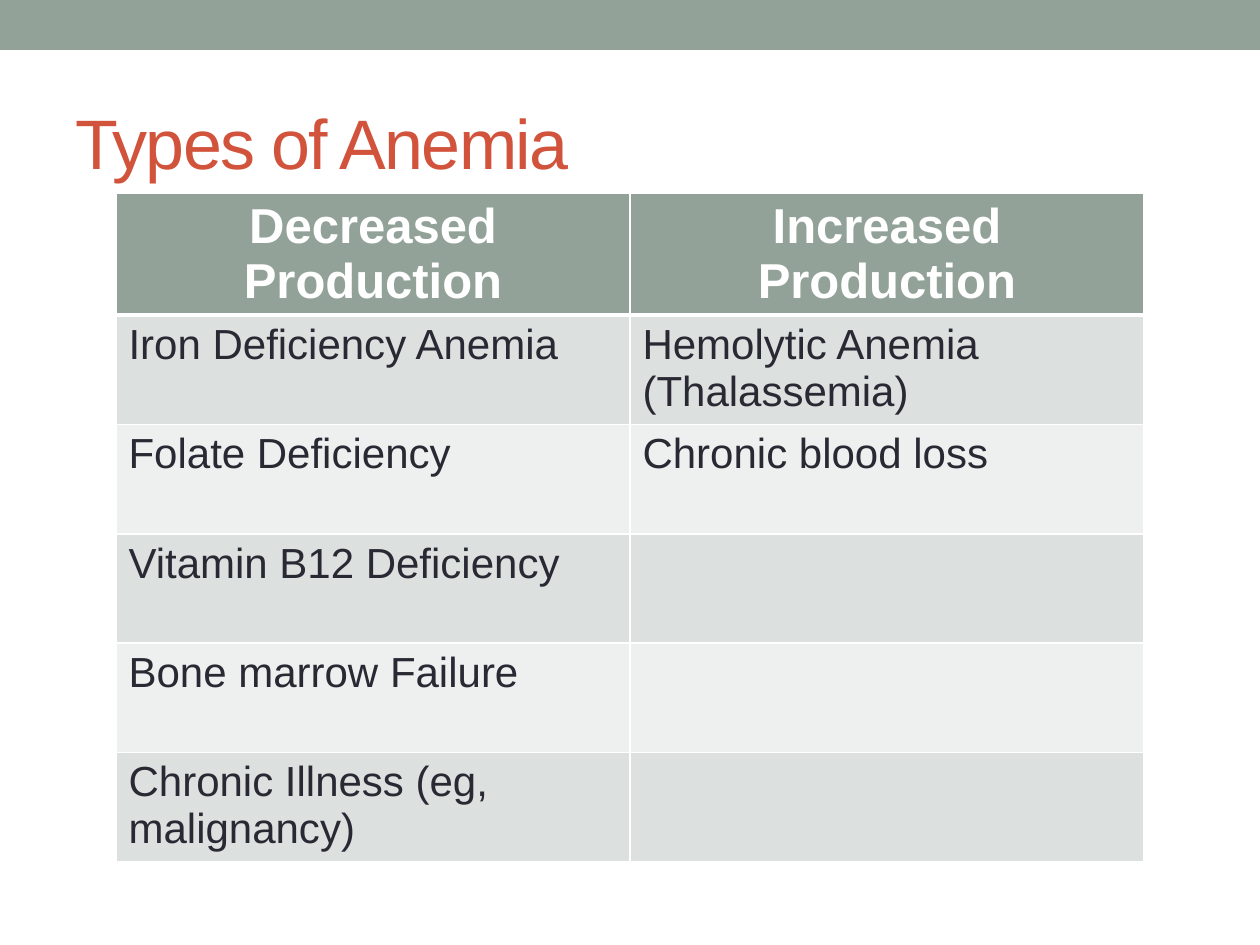
from dataclasses import dataclass

from lxml.etree import SubElement
from pptx import Presentation
from pptx.dml.color import RGBColor
from pptx.enum.shapes import MSO_SHAPE
from pptx.enum.text import MSO_ANCHOR, PP_ALIGN
from pptx.oxml.ns import qn
from pptx.util import Emu, Pt

PX = 914400 / 126


def emu(pixels):
    return Emu(round(pixels * PX))


@dataclass(frozen=True)
class Theme:
    font: str = "Arial"
    sage: str = "93A299"
    red: str = "D2533C"
    ink: str = "292934"
    white: str = "FFFFFF"
    bands: tuple = ("DCE0DE", "EEF0EF")
    title_size: int = 40
    header_size: int = 28
    body_size: int = 24
    thin: int = 1
    thick: int = 3


def write_text(frame, text, *, font, size, color, bold=False,
               align=PP_ALIGN.LEFT, tracking=0):
    paragraph = frame.paragraphs[0]
    paragraph.alignment = align
    run = paragraph.add_run()
    run.text = text
    run.font.name = font
    run.font.size = Pt(size)
    run.font.bold = bold
    run.font.color.rgb = RGBColor.from_string(color)
    if tracking:
        run.font._element.set("spc", str(tracking * 100))


def set_borders(cell, color, widths):
    properties = cell._tc.get_or_add_tcPr()
    for side, width in widths.items():
        line = SubElement(properties, qn(f"a:ln{side}"), w=str(Pt(width)))
        fill = SubElement(line, qn("a:solidFill"))
        SubElement(fill, qn("a:srgbClr"), val=color)


class SlideBuilder:
    def __init__(self, slide, theme):
        self.slide = slide
        self.theme = theme

    def band(self, left, top, width, height):
        shape = self.slide.shapes.add_shape(
            MSO_SHAPE.RECTANGLE, *map(emu, (left, top, width, height)))
        shape.shadow.inherit = False
        shape.fill.solid()
        shape.fill.fore_color.rgb = RGBColor.from_string(self.theme.sage)
        shape.line.fill.background()

    def title(self, text, left, top, width, height):
        shape = self.slide.shapes.title
        shape.left, shape.top, shape.width, shape.height = map(
            emu, (left, top, width, height))
        shape.text_frame.vertical_anchor = MSO_ANCHOR.MIDDLE
        write_text(shape.text_frame, text, font=self.theme.font,
                   size=self.theme.title_size, color=self.theme.red,
                   tracking=-1)

    def table(self, rows, left, top, width, header_height, body_height):
        table = self.slide.shapes.add_table(
            len(rows), len(rows[0]), emu(left), emu(top), emu(width),
            emu(header_height + body_height)).table
        row_height = emu(body_height / (len(rows) - 1))
        for index, texts in enumerate(rows):
            table.rows[index].height = row_height if index else emu(header_height)
            for column, text in enumerate(texts):
                self.cell(table.cell(index, column), text, index)

    def cell(self, cell, text, row):
        theme = self.theme
        widths = dict.fromkeys("LRTB", theme.thin)
        if row == 0:
            widths["B"] = theme.thick
            fill = theme.sage
            style = dict(size=theme.header_size, color=theme.white, bold=True,
                         align=PP_ALIGN.CENTER)
        else:
            if row == 1:
                widths["T"] = theme.thick
            fill = theme.bands[(row - 1) % 2]
            style = dict(size=theme.body_size, color=theme.ink)
        set_borders(cell, theme.white, widths)
        cell.fill.solid()
        cell.fill.fore_color.rgb = RGBColor.from_string(fill)
        if text:
            write_text(cell.text_frame, text, font=theme.font, **style)


ANEMIA_TYPES = [
    ("Decreased Production", "Increased Production"),
    ("Iron Deficiency Anemia", "Hemolytic Anemia (Thalassemia)"),
    ("Folate Deficiency", "Chronic blood loss"),
    ("Vitamin B12 Deficiency", ""),
    ("Bone marrow Failure", ""),
    ("Chronic Illness (eg, malignancy)", ""),
]


def main():
    presentation = Presentation()
    presentation.slide_width = emu(1260)
    presentation.slide_height = emu(945)
    slide = presentation.slides.add_slide(presentation.slide_layouts[5])
    builder = SlideBuilder(slide, Theme())
    builder.band(0, 0, 1260, 50)
    builder.title("Types of Anemia", 63, 73, 1134, 136)
    builder.table(ANEMIA_TYPES, 116, 193, 1028, 122, 547)
    presentation.save("out.pptx")


if __name__ == "__main__":
    main()
